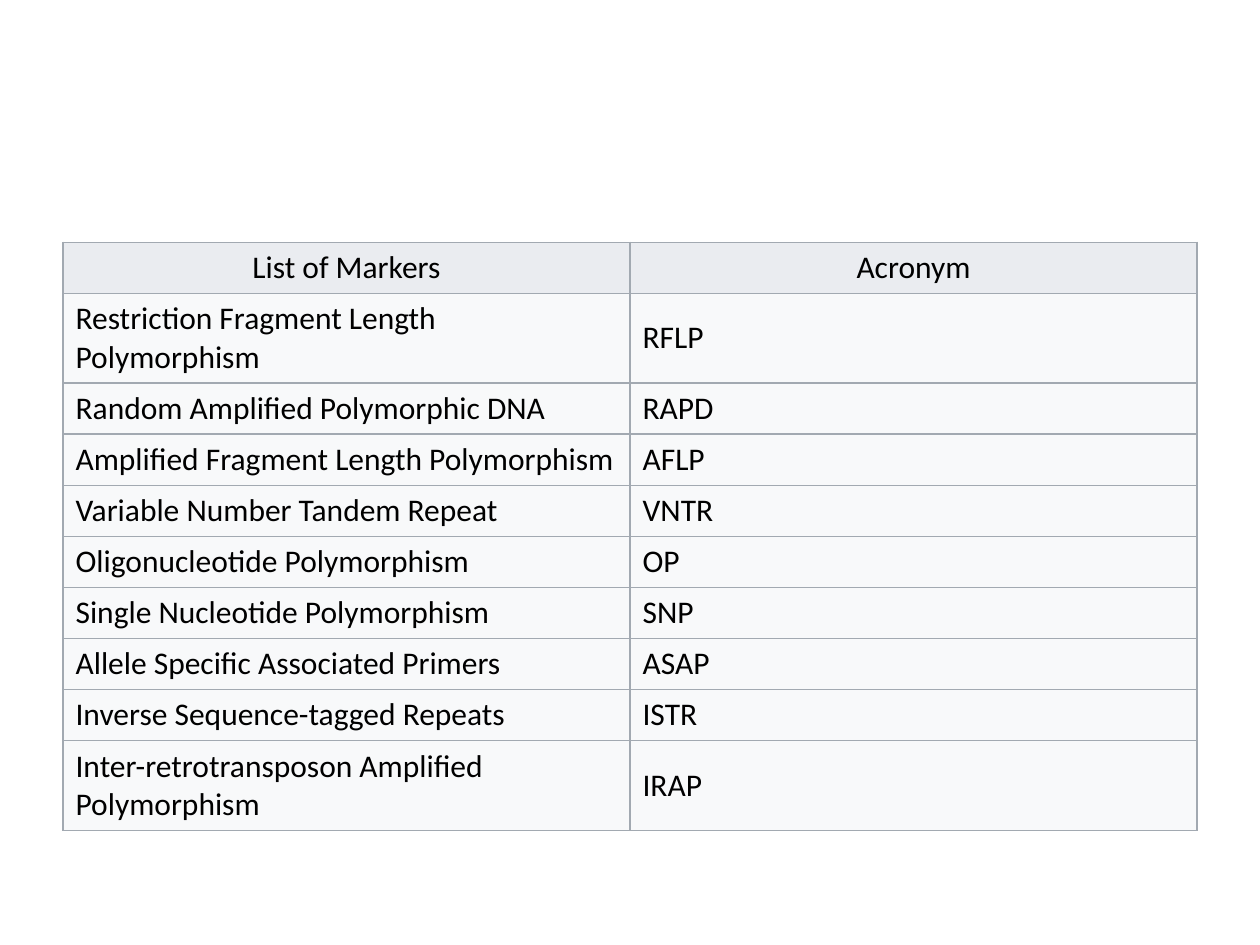
"""Build a slide with a table of molecular markers and their acronyms."""
from lxml import etree
from pptx import Presentation
from pptx.dml.color import RGBColor
from pptx.enum.text import MSO_ANCHOR, PP_ALIGN
from pptx.oxml.ns import qn
from pptx.util import Cm, Pt

HEADER = ("List of Markers", "Acronym")
MARKERS = [
    ("Restriction Fragment Length Polymorphism", "RFLP"),
    ("Random Amplified Polymorphic DNA", "RAPD"),
    ("Amplified Fragment Length Polymorphism", "AFLP"),
    ("Variable Number Tandem Repeat", "VNTR"),
    ("Oligonucleotide Polymorphism", "OP"),
    ("Single Nucleotide Polymorphism", "SNP"),
    ("Allele Specific Associated Primers", "ASAP"),
    ("Inverse Sequence-tagged Repeats", "ISTR"),
    ("Inter-retrotransposon Amplified Polymorphism", "IRAP"),
]

FONT = "Calibri"
BLACK = RGBColor(0x00, 0x00, 0x00)
HEADER_FILL = RGBColor(0xEA, 0xEC, 0xF0)
BODY_FILL = RGBColor(0xF8, 0xF9, 0xFA)
BORDER = RGBColor(0xA2, 0xA9, 0xB1)
MIDDLE = MSO_ANCHOR.MIDDLE
CENTER, LEFT = PP_ALIGN.CENTER, PP_ALIGN.LEFT

COL_WIDTH = Cm(11.43)
LINE_ROW, WRAPPED_ROW = Cm(1.03), Cm(1.81)
WRAP_LENGTH = 38


def add_borders(cell):
    tc_pr = cell._tc.get_or_add_tcPr()
    for side in ("a:lnL", "a:lnR", "a:lnT", "a:lnB"):
        ln = etree.SubElement(tc_pr, qn(side), w=str(Pt(0.75)))
        fill = etree.SubElement(ln, qn("a:solidFill"))
        etree.SubElement(fill, qn("a:srgbClr"), val=str(BORDER))


def fill_cell(cell, text, color, align):
    add_borders(cell)
    cell.fill.solid()
    cell.fill.fore_color.rgb = color
    cell.vertical_anchor = MIDDLE
    p = cell.text_frame.paragraphs[0]
    p.alignment = align
    r = p.add_run()
    r.text = text
    r.font.name = FONT
    r.font.size = Pt(18)
    r.font.bold = False
    r.font.color.rgb = BLACK


def main():
    prs = Presentation()
    prs.slide_width, prs.slide_height = Cm(25.4), Cm(19.05)
    s = prs.slides.add_slide(prs.slide_layouts[6])

    rows = [HEADER] + MARKERS
    heights = [WRAPPED_ROW if len(name) > WRAP_LENGTH else LINE_ROW
               for name, _ in rows]
    table = s.shapes.add_table(len(rows), len(HEADER), Cm(1.27), Cm(4.88),
                               COL_WIDTH * len(HEADER), sum(heights)).table
    table.horz_banding = False
    for col in table.columns:
        col.width = COL_WIDTH

    for i, (values, height) in enumerate(zip(rows, heights)):
        table.rows[i].height = height
        color, align = (BODY_FILL, LEFT) if i else (HEADER_FILL, CENTER)
        for j, text in enumerate(values):
            fill_cell(table.cell(i, j), text, color, align)

    prs.save("out.pptx")


if __name__ == "__main__":
    main()
